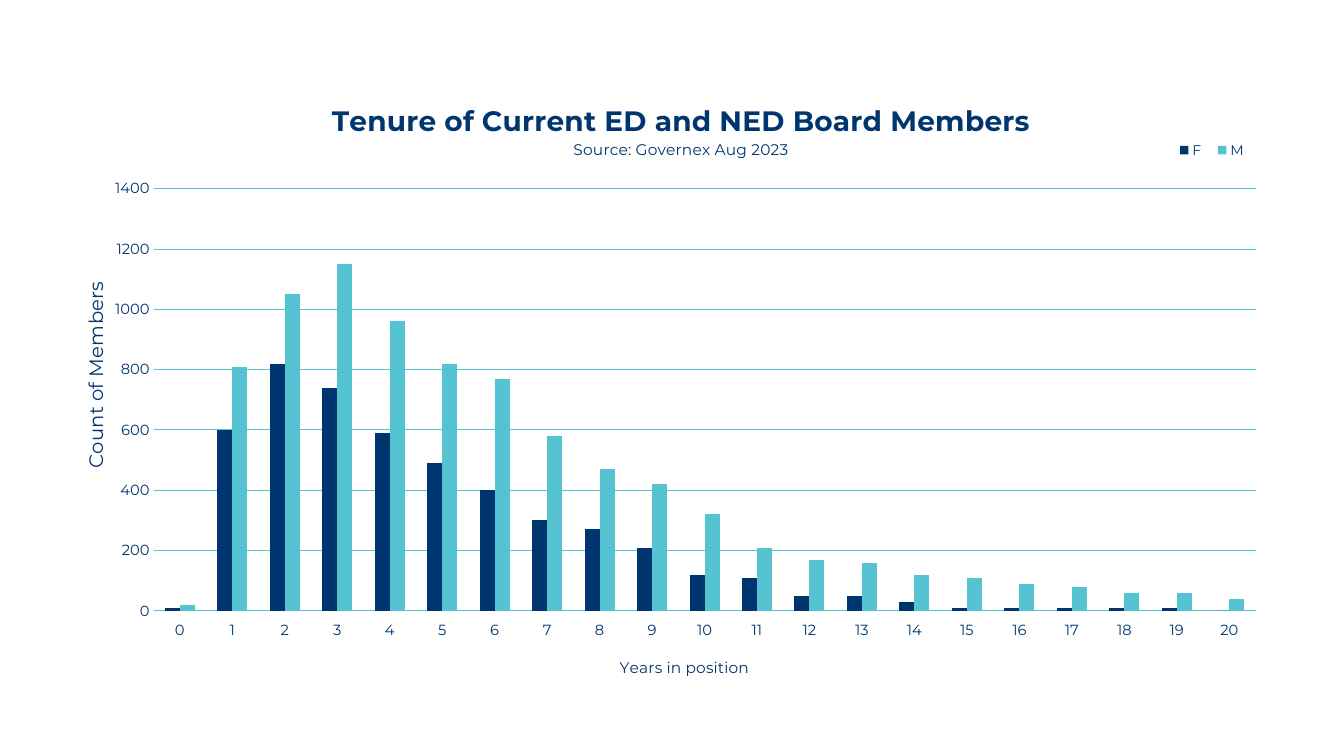
"""Build a slide with a column chart of board member tenure."""
from dataclasses import dataclass

import pptx
import pptx.chart.axis
import pptx.chart.chart
import pptx.chart.data
import pptx.dml.color
import pptx.enum.chart
import pptx.oxml
import pptx.oxml.ns
import pptx.oxml.xmlchemy
import pptx.text.text
import pptx.util

Inches = pptx.util.Inches
Color = pptx.dml.color.RGBColor
Node = pptx.oxml.xmlchemy.BaseOxmlElement


@dataclass(frozen=True)
class Theme:
    navy: Color = Color.from_string("00366F")
    teal: Color = Color.from_string("56C3D2")
    face: str = "Montserrat"
    head: float = 20
    side: float = 14
    note: float = 11
    tick: float = 10.5
    key: float = 10
    grid: float = 0.75


@dataclass(frozen=True)
class Group:
    name: str
    counts: tuple[int, ...]
    color: Color


@dataclass(frozen=True)
class Label:
    text: str
    size: float
    bold: bool = False


@dataclass(frozen=True)
class Spot:
    x: float
    y: float
    w: float = 0
    h: float = 0
    inner: bool = False


THEME = Theme()
GROUPS = (
    Group("F", (10, 600, 820, 740, 590, 490, 400, 300, 270, 210, 120,
                110, 50, 50, 30, 10, 10, 10, 10, 10, 0), THEME.navy),
    Group("M", (20, 810, 1050, 1150, 960, 820, 770, 580, 470, 420, 320,
                210, 170, 160, 120, 110, 90, 80, 60, 60, 40), THEME.teal),
)
HEADS = (
    Label("Tenure of Current ED and NED Board Members", THEME.head, True),
    Label("Source: Governex Aug 2023", THEME.note),
)


def style(font: pptx.text.text.Font, size: float, bold: bool = False) -> None:
    """Apply the theme face and colour to a font."""
    font.name = THEME.face
    font.size = pptx.util.Pt(size)
    font.bold = bold
    font.color.rgb = THEME.navy


def write(frame: pptx.text.text.TextFrame, labels: tuple[Label, ...]) -> None:
    """Write one paragraph for each label."""
    frame.text = "\n".join(label.text for label in labels)
    for para, label in zip(frame.paragraphs, labels):
        style(para.font, label.size, label.bold)


def pin(node: Node, spot: Spot, index: int = 1) -> None:
    """Place a chart part at fractions of the chart area."""
    for old in node.xpath("c:layout"):
        node.remove(old)
    rules = [("layoutTarget", "inner")] if spot.inner else []
    rules += [("xMode", "edge"), ("yMode", "edge"), ("x", spot.x), ("y", spot.y)]
    rules += [("w", spot.w), ("h", spot.h)] if spot.w else []
    body = "".join(f'<c:{tag} val="{value}"/>' for tag, value in rules)
    space = pptx.oxml.ns.nsdecls("c")
    node.insert(index, pptx.oxml.parse_xml(
        f"<c:layout {space}><c:manualLayout>{body}</c:manualLayout></c:layout>"))


def dress(axis: pptx.chart.axis._BaseAxis, label: Label, spot: Spot) -> None:
    """Style an axis and place its title."""
    style(axis.tick_labels.font, THEME.tick)
    axis.format.line.fill.background()
    write(axis.axis_title.text_frame, (label,))
    pin(axis.axis_title._element, spot)


def paint(chart: pptx.chart.chart.Chart) -> None:
    """Style the bars, axes, title and legend."""
    marks = pptx.enum.chart.XL_TICK_MARK
    plot = chart.plots[0]
    plot.gap_width = 150
    plot.overlap = 0
    plot.vary_by_categories = False
    for bars, group in zip(plot.series, GROUPS):
        bars.format.fill.solid()
        bars.format.fill.fore_color.rgb = group.color

    years, count = chart.category_axis, chart.value_axis
    dress(years, Label("Years in position", THEME.note), Spot(0.45, 0.95))
    dress(count, Label("Count of Members", THEME.side), Spot(0.02, 0.32))
    years.major_tick_mark = marks.OUTSIDE
    count.major_tick_mark = marks.NONE
    count.minimum_scale, count.maximum_scale, count.major_unit = 0, 1400, 200
    count.axis_title._element.xpath(".//a:bodyPr")[0].set("rot", "-5400000")
    count.has_major_gridlines = True
    line = count.major_gridlines.format.line
    line.color.rgb = THEME.teal
    line.width = pptx.util.Pt(THEME.grid)

    chart.has_title = True
    write(chart.chart_title.text_frame, HEADS)
    pin(chart.chart_title._element, Spot(0.22, 0.02))
    chart.has_legend = True
    chart.legend.position = pptx.enum.chart.XL_LEGEND_POSITION.BOTTOM
    chart.legend.include_in_layout = False
    style(chart.legend.font, THEME.key)
    pin(chart.legend._element, Spot(0.89, 0.08, 0.07, 0.05))
    area = chart._chartSpace.xpath("c:chart/c:plotArea")[0]
    pin(area, Spot(0.08, 0.17, 0.88, 0.71, True), 0)


def main() -> None:
    """Create the deck and save it."""
    deck = pptx.Presentation()
    deck.slide_width, deck.slide_height = Inches(13.33), Inches(7.5)
    slide = deck.slides.add_slide(deck.slide_layouts[6])
    data = pptx.chart.data.CategoryChartData()
    data.categories = [str(year) for year in range(21)]
    for group in GROUPS:
        data.add_series(group.name, group.counts)
    frame = slide.shapes.add_chart(
        pptx.enum.chart.XL_CHART_TYPE.COLUMN_CLUSTERED,
        Inches(0.53), Inches(0.87), Inches(12.42), Inches(5.9), data)
    paint(frame.chart)
    deck.save("out.pptx")


if __name__ == "__main__":
    main()
